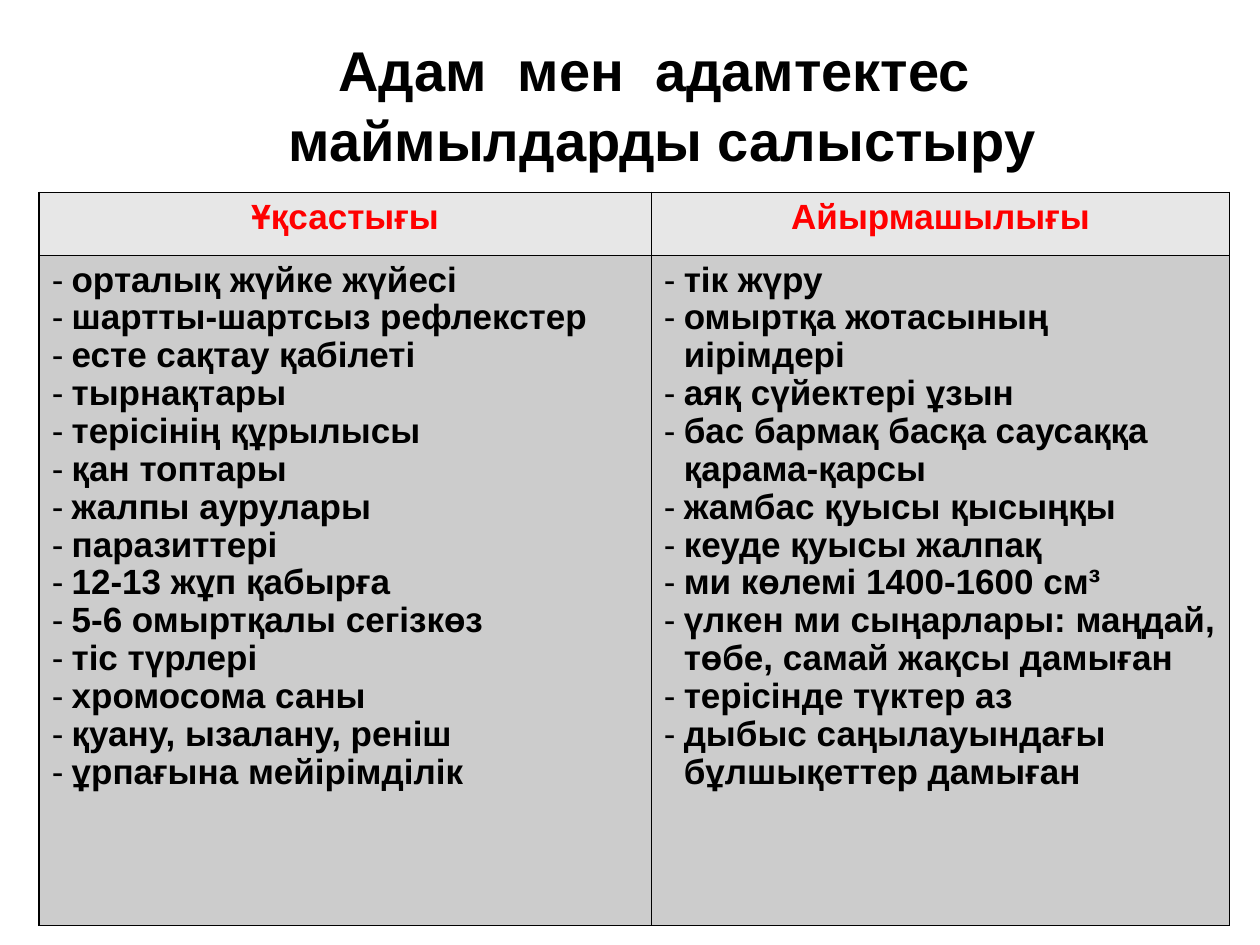
from dataclasses import dataclass

from lxml.etree import SubElement
from pptx import Presentation
from pptx.dml.color import RGBColor
from pptx.enum.text import MSO_ANCHOR, MSO_AUTO_SIZE, PP_ALIGN
from pptx.oxml.ns import qn
from pptx.util import Cm, Pt

TITLE_LINES = ["Адам  мен  адамтектес", " маймылдарды салыстыру"]

# A line break inside an item is written as \v.
COMPARISON = {
    "Ұқсастығы": [
        "орталық жүйке жүйесі",
        "шартты-шартсыз рефлекстер",
        "есте сақтау қабілеті",
        "тырнақтары",
        "терісінің құрылысы",
        "қан топтары",
        "жалпы аурулары",
        "паразиттері",
        "12-13 жұп қабырға",
        "5-6 омыртқалы сегізкөз",
        "тіс түрлері",
        "хромосома саны",
        "қуану, ызалану, реніш",
        "ұрпағына мейірімділік",
    ],
    "Айырмашылығы": [
        "тік жүру",
        "омыртқа жотасының\vиірімдері",
        "аяқ сүйектері ұзын",
        "бас бармақ басқа саусаққа\vқарама-қарсы",
        "жамбас қуысы қысыңқы",
        "кеуде қуысы жалпақ",
        "ми көлемі 1400-1600 см³",
        "үлкен ми сыңарлары: маңдай,\vтөбе, самай жақсы дамыған",
        "терісінде түктер аз",
        "дыбыс саңылауындағы\vбұлшықеттер дамыған",
    ],
}


@dataclass(frozen=True)
class Theme:
    font: str = "Arial"
    title_size: int = 32
    table_size: int = 20
    text: str = "000000"
    heading: str = "FF0000"
    heading_fill: str = "E7E7E7"
    body_fill: str = "CCCCCC"
    border: str = "000000"
    border_width: int = 1


THEME = Theme()
SLIDE_SIZE = Cm(25.4), Cm(19.05)
TITLE_BOX = {"left": Cm(1.98), "top": Cm(0.58), "width": Cm(22.43), "height": Cm(3)}
TABLE_LEFT, TABLE_TOP = Cm(0.79), Cm(3.88)
COLUMN_WIDTHS = [Cm(12.34), Cm(11.66)]
ROW_HEIGHTS = [Cm(1.27), Cm(13.51)]
HANGING_INDENT = Cm(0.4)


def write_lines(frame, lines, size, color, align, line_spacing):
    frame.text = "\n".join(lines)
    font_format = {"name": THEME.font, "size": Pt(size), "bold": True}
    for paragraph in frame.paragraphs:
        paragraph.alignment = align
        paragraph.line_spacing = line_spacing
        for run in paragraph.runs:
            for attribute, value in font_format.items():
                setattr(run.font, attribute, value)
            run.font.color.rgb = RGBColor.from_string(color)


def add_dash(paragraph):
    properties = paragraph._p.get_or_add_pPr()
    properties.set("marL", str(HANGING_INDENT))
    properties.set("indent", str(-HANGING_INDENT))
    SubElement(properties, qn("a:buFont"), typeface=THEME.font)
    SubElement(properties, qn("a:buChar"), char="-")


def paint_cell(cell, fill):
    """Draw all four borders, then the fill, in the order the schema asks for."""
    properties = cell._tc.get_or_add_tcPr()
    for side in ("lnL", "lnR", "lnT", "lnB"):
        line = SubElement(properties, qn(f"a:{side}"), w=str(Pt(THEME.border_width)))
        SubElement(SubElement(line, qn("a:solidFill")), qn("a:srgbClr"), val=THEME.border)
    cell.fill.solid()
    cell.fill.fore_color.rgb = RGBColor.from_string(fill)


def add_title(slide):
    title = slide.shapes.title
    for attribute, value in TITLE_BOX.items():
        setattr(title, attribute, value)
    frame = title.text_frame
    frame.auto_size = MSO_AUTO_SIZE.NONE
    frame.vertical_anchor = MSO_ANCHOR.MIDDLE
    write_lines(frame, TITLE_LINES, THEME.title_size, THEME.text, PP_ALIGN.CENTER, 1.04)


def add_comparison(slide):
    table = slide.shapes.add_table(
        len(ROW_HEIGHTS), len(COLUMN_WIDTHS), TABLE_LEFT, TABLE_TOP,
        sum(COLUMN_WIDTHS), sum(ROW_HEIGHTS),
    ).table
    table.first_row = table.horz_banding = False
    for row, height in zip(table.rows, ROW_HEIGHTS):
        row.height = height
    for index, (heading, items) in enumerate(COMPARISON.items()):
        table.columns[index].width = COLUMN_WIDTHS[index]
        heading_cell, items_cell = table.cell(0, index), table.cell(1, index)
        write_lines(heading_cell.text_frame, [heading], THEME.table_size,
                    THEME.heading, PP_ALIGN.CENTER, 0.97)
        write_lines(items_cell.text_frame, items, THEME.table_size,
                    THEME.text, PP_ALIGN.LEFT, 0.97)
        for paragraph in items_cell.text_frame.paragraphs:
            add_dash(paragraph)
        paint_cell(heading_cell, THEME.heading_fill)
        paint_cell(items_cell, THEME.body_fill)


def main():
    presentation = Presentation()
    presentation.slide_width, presentation.slide_height = SLIDE_SIZE
    slide = presentation.slides.add_slide(presentation.slide_layouts[5])
    add_title(slide)
    add_comparison(slide)
    presentation.save("out.pptx")


if __name__ == "__main__":
    main()
